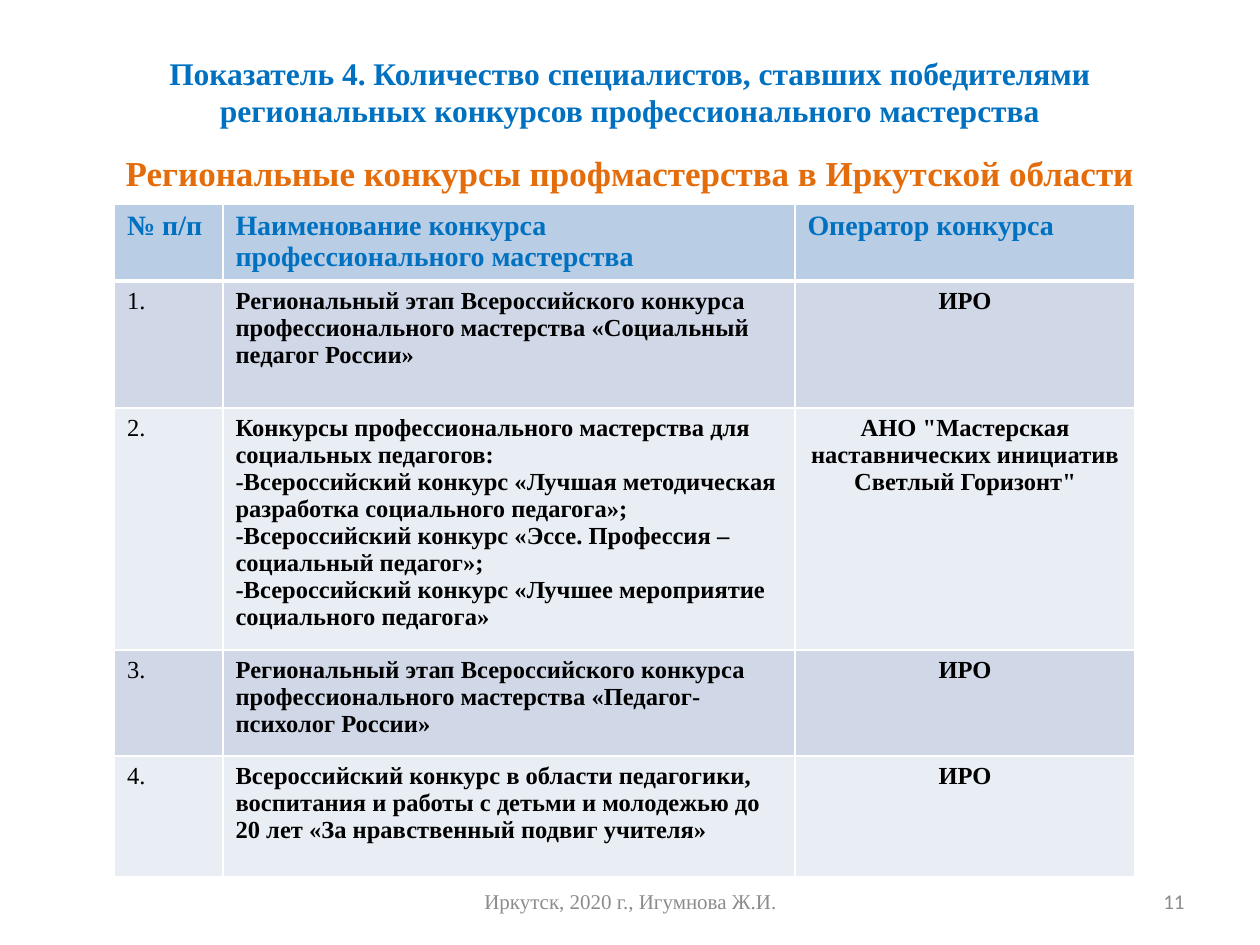
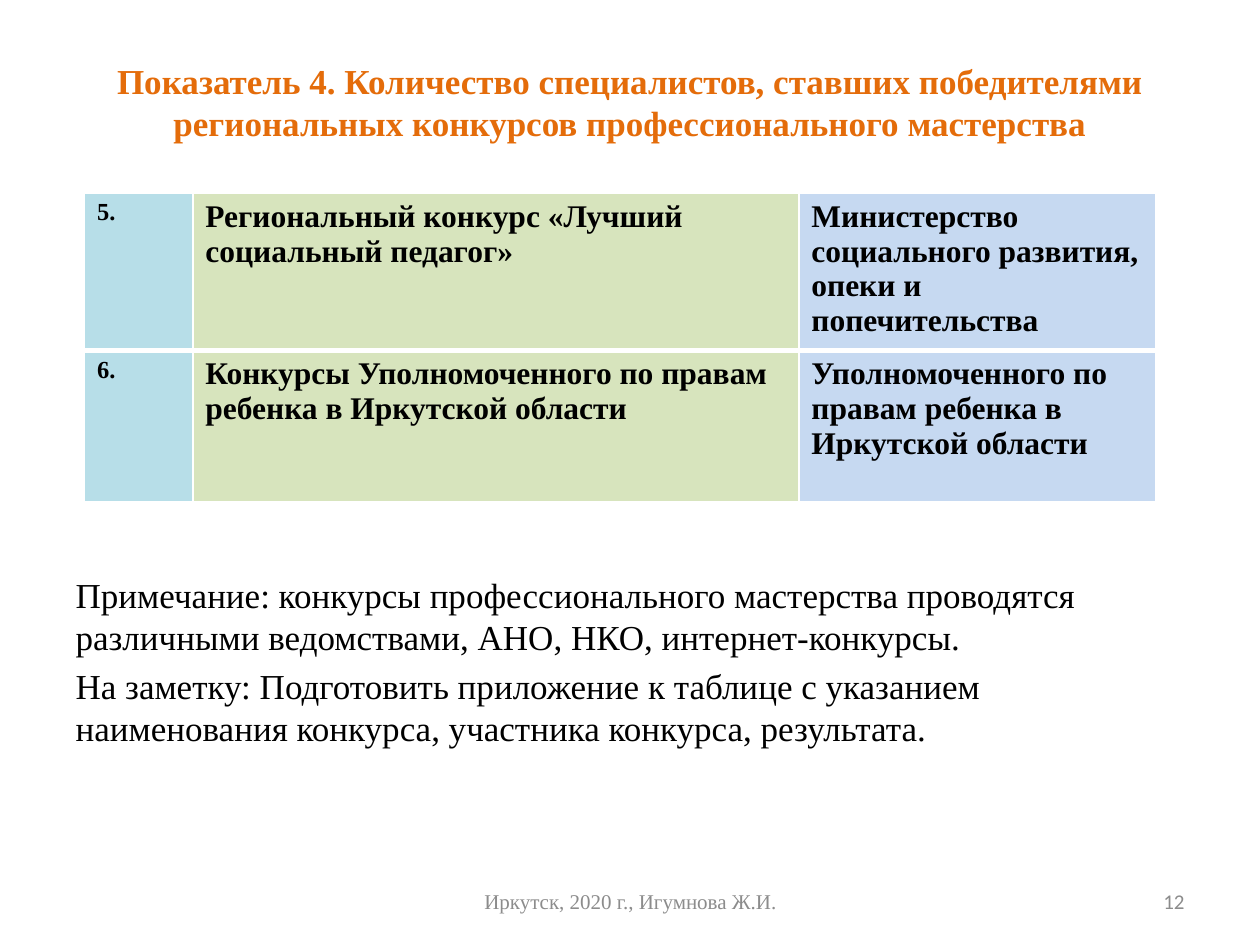
from dataclasses import dataclass

from lxml.etree import SubElement
from pptx import Presentation
from pptx.dml.color import RGBColor
from pptx.enum.text import MSO_ANCHOR as Anchor, MSO_AUTO_SIZE as AutoSize, PP_ALIGN as Align
from pptx.oxml import parse_xml
from pptx.oxml.ns import nsdecls, qn
from pptx.util import Pt

EMU_PER_PX = 9144
SERIF = "Times New Roman"
SANS = "Calibri"
BLUE = RGBColor(0x00, 0x70, 0xC0)
ORANGE = RGBColor(0xE4, 0x6C, 0x0A)
BLACK = RGBColor(0x00, 0x00, 0x00)
GRAY = RGBColor(0x8C, 0x8C, 0x8C)
HEADER_FILL = RGBColor(0xB9, 0xCD, 0xE5)
BAND_FILLS = (RGBColor(0xD0, 0xD8, 0xE8), RGBColor(0xE9, 0xED, 0xF4))
COLUMN_FILLS = (
    RGBColor(0xB7, 0xDE, 0xE8),
    RGBColor(0xD7, 0xE4, 0xBD),
    RGBColor(0xC6, 0xD9, 0xF1),
)
THIN, THICK = 1, 3

TITLE = (
    "Показатель 4. Количество специалистов, ставших победителями "
    "региональных конкурсов профессионального мастерства"
)
SUBTITLE = "Региональные конкурсы профмастерства в Иркутской области"
FOOTER = "Иркутск, 2020 г., Игумнова Ж.И."
NOTES = (
    "Примечание: конкурсы профессионального мастерства проводятся различными "
    "ведомствами, АНО, НКО, интернет-конкурсы.\n"
    "На заметку: Подготовить приложение к таблице с указанием наименования "
    "конкурса, участника конкурса, результата."
)
HEADINGS = ("№ п/п", "Наименование конкурса профессионального мастерства", "Оператор конкурса")
CONTESTS = (
    (
        "Региональный этап Всероссийского конкурса профессионального мастерства "
        "«Социальный педагог России»",
        "ИРО",
    ),
    (
        "Конкурсы профессионального мастерства для социальных педагогов:\n"
        "-Всероссийский конкурс «Лучшая методическая разработка социального педагога»;\n"
        "-Всероссийский конкурс «Эссе. Профессия – социальный педагог»;\n"
        "-Всероссийский конкурс «Лучшее мероприятие социального педагога»",
        'АНО "Мастерская наставнических инициатив Светлый Горизонт"',
    ),
    (
        "Региональный этап Всероссийского конкурса профессионального мастерства "
        "«Педагог-психолог России»",
        "ИРО",
    ),
    (
        "Всероссийский конкурс в области педагогики, воспитания и работы с детьми "
        "и молодежью до 20 лет «За нравственный подвиг учителя»",
        "ИРО",
    ),
)
MORE_CONTESTS = (
    (
        "Региональный конкурс «Лучший социальный педагог»",
        "Министерство социального развития, опеки и попечительства",
    ),
    (
        "Конкурсы Уполномоченного по правам ребенка в Иркутской области",
        "Уполномоченного по правам ребенка в Иркутской области",
    ),
)


@dataclass(frozen=True)
class Box:
    left: int
    top: int
    width: int
    height: int

    def emu(self) -> tuple[int, ...]:
        return tuple(px(n) for n in (self.left, self.top, self.width, self.height))


@dataclass(frozen=True)
class CellStyle:
    fill: RGBColor
    size: int
    color: RGBColor = BLACK
    bold: bool = True
    align: Align = Align.LEFT


@dataclass(frozen=True)
class Cell:
    text: str
    style: CellStyle


def px(length: int) -> int:
    return length * EMU_PER_PX


def write(frame, text: str, *, size: int, color: RGBColor = BLACK, font: str = SERIF,
          bold: bool = False, align: Align = Align.LEFT, before: int = 0) -> None:
    frame.word_wrap = True
    for index, line in enumerate(text.split("\n")):
        para = frame.paragraphs[0] if index == 0 else frame.add_paragraph()
        para.alignment = align
        para.space_before = Pt(before)
        span = para.add_run()
        span.text = line
        span.font.name = font
        span.font.size = Pt(size)
        span.font.bold = bold
        span.font.color.rgb = color
        ending = SubElement(para._p, qn("a:endParaRPr"), sz=str(size * 100))
        SubElement(ending, qn("a:latin"), typeface=font)


def place(shape, box: Box):
    shape.left, shape.top, shape.width, shape.height = box.emu()
    shape.text_frame.auto_size = AutoSize.NONE
    return shape.text_frame


def add_label(page, box: Box, text: str, font: str, align: Align) -> None:
    frame = page.shapes.add_textbox(*box.emu()).text_frame
    frame.vertical_anchor = Anchor.MIDDLE
    write(frame, text, size=12, color=GRAY, font=font, align=align)


def add_page(deck, number: int, title_height: int, title_size: int, title_color: RGBColor):
    page = deck.slides.add_slide(deck.slide_layouts[1])
    frame = place(page.shapes.title, Box(50, 30, 900, title_height))
    frame.vertical_anchor = Anchor.MIDDLE
    write(frame, TITLE, size=title_size, color=title_color, bold=True, align=Align.CENTER)
    add_label(page, Box(342, 695, 317, 40), FOOTER, SERIF, Align.CENTER)
    add_label(page, Box(717, 695, 233, 40), str(number), SANS, Align.RIGHT)
    return page


def fill_body(page, box: Box, text: str, *, inset: int = 5, **text_format) -> None:
    frame = place(page.placeholders[1], box)
    frame.margin_top = px(inset)
    write(frame, text, size=20, before=4, **text_format)
    for para in frame.paragraphs:
        properties = para._p.get_or_add_pPr()
        properties.set("marL", "0")
        properties.set("indent", "0")
        SubElement(properties, qn("a:buNone"))


def set_borders(cell, top: int, bottom: int) -> None:
    properties = cell._tc.get_or_add_tcPr()
    widths = {"lnL": THIN, "lnR": THIN, "lnT": top, "lnB": bottom}
    for index, (side, width) in enumerate(widths.items()):
        properties.insert(index, parse_xml(
            f'<a:{side} {nsdecls("a")} w="{Pt(width)}"><a:solidFill>'
            f'<a:srgbClr val="FFFFFF"/></a:solidFill></a:{side}>'
        ))


def add_grid(page, left: int, top: int, widths: tuple[int, ...], heights: tuple[int, ...],
             rows: list[list[Cell]]) -> None:
    box = Box(left, top, sum(widths), sum(heights))
    table = page.shapes.add_table(len(heights), len(widths), *box.emu()).table
    table.horz_banding = False
    for column, width in zip(table.columns, widths):
        column.width = px(width)
    for index, (row, height, cells) in enumerate(zip(table.rows, heights, rows)):
        row.height = px(height)
        for cell, content in zip(row.cells, cells):
            style = content.style
            cell.margin_bottom = 0
            cell.fill.solid()
            cell.fill.fore_color.rgb = style.fill
            set_borders(cell, THICK if index == 1 else THIN, THICK if index == 0 else THIN)
            write(cell.text_frame, content.text, size=style.size, color=style.color,
                  bold=style.bold, align=style.align)


def build_contests(deck) -> None:
    page = add_page(deck, 11, 85, 18, BLUE)
    fill_body(page, Box(50, 115, 900, 555), SUBTITLE,
              color=ORANGE, bold=True, align=Align.CENTER)
    rows = [[Cell(text, CellStyle(HEADER_FILL, 16, BLUE)) for text in HEADINGS]]
    for number, (name, operator) in enumerate(CONTESTS, 1):
        fill = BAND_FILLS[(number - 1) % 2]
        rows.append([
            Cell(f"{number}.", CellStyle(fill, 14, bold=False)),
            Cell(name, CellStyle(fill, 14)),
            Cell(operator, CellStyle(fill, 14, align=Align.CENTER)),
        ])
    add_grid(page, 91, 162, (86, 454, 270), (61, 101, 192, 84, 96), rows)


def build_more_contests(deck) -> None:
    page = add_page(deck, 12, 101, 20, ORANGE)
    fill_body(page, Box(50, 139, 900, 531), NOTES, inset=316)
    styles = [CellStyle(fill, size) for fill, size in zip(COLUMN_FILLS, (14, 18, 18))]
    rows = [
        [Cell(text, style) for text, style in zip((f"{number}.", *contest), styles)]
        for number, contest in enumerate(MORE_CONTESTS, len(CONTESTS) + 1)
    ]
    add_grid(page, 67, 153, (86, 481, 283), (120, 120), rows)


def main() -> None:
    deck = Presentation()
    deck.slide_width, deck.slide_height = px(1000), px(750)
    build_contests(deck)
    build_more_contests(deck)
    deck.save("out.pptx")


if __name__ == "__main__":
    main()
